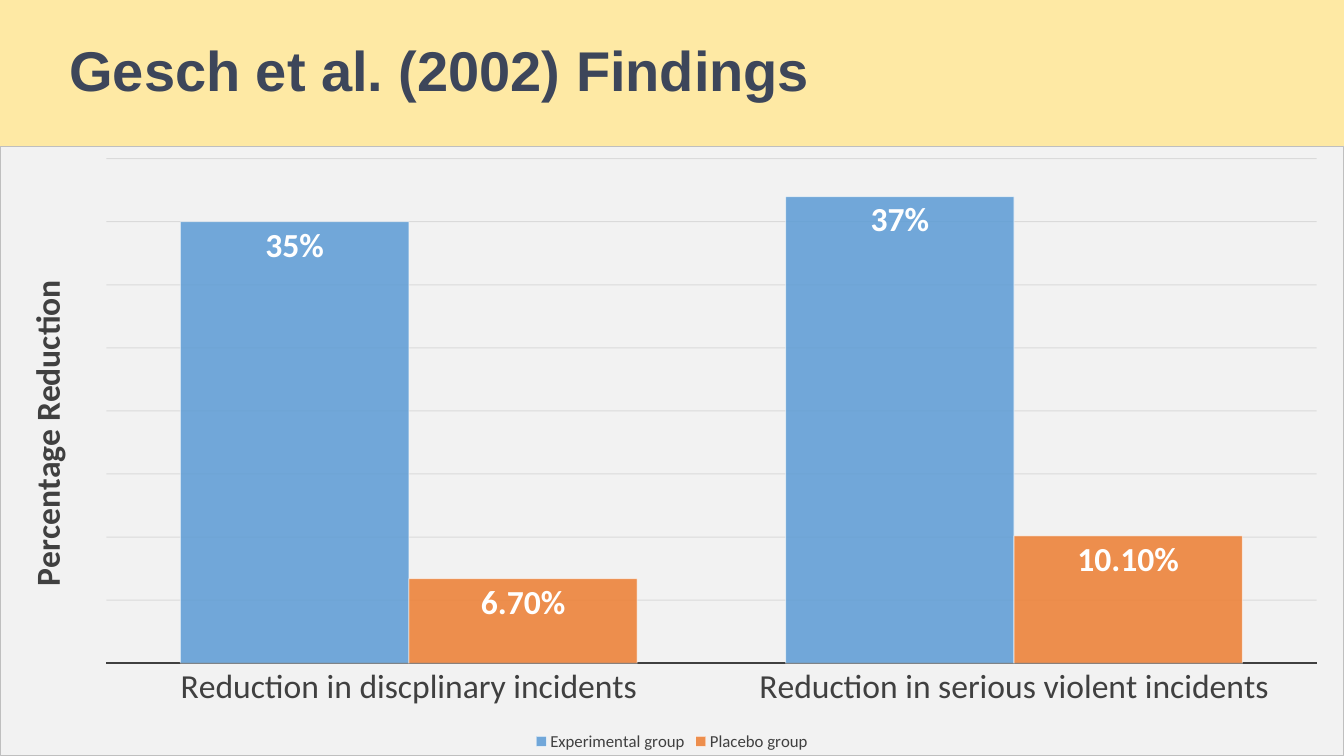
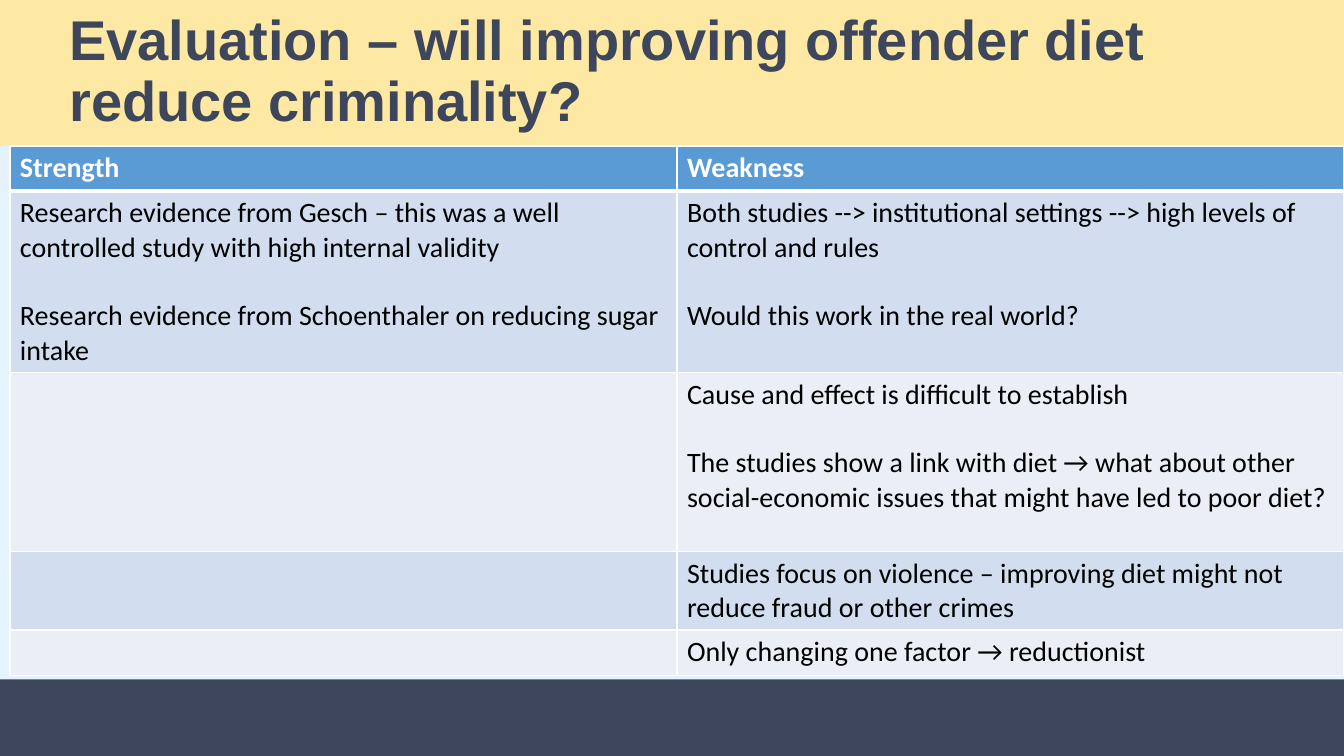
from dataclasses import dataclass

from lxml.etree import SubElement
from pptx import Presentation
from pptx.chart.data import CategoryChartData
from pptx.dml.color import RGBColor
from pptx.enum.chart import XL_CHART_TYPE as ChartType
from pptx.enum.chart import XL_LABEL_POSITION as LabelPosition
from pptx.enum.chart import XL_LEGEND_POSITION as LegendPosition
from pptx.enum.chart import XL_TICK_MARK as TickMark
from pptx.enum.shapes import MSO_SHAPE as ShapeType
from pptx.enum.text import MSO_ANCHOR as Anchor
from pptx.enum.text import PP_ALIGN as Align
from pptx.oxml import parse_xml
from pptx.oxml.ns import nsdecls, qn
from pptx.util import Cm, Pt

COLORS = {
    "page": "E5F3FF",
    "title_band": "FEE9A4",
    "navy": "3D465A",
    "blue": "5B9BD5",
    "orange": "ED7D31",
    "band_dark": "D2DEEF",
    "band_light": "EAEFF7",
    "chart_fill": "F2F2F2",
    "chart_border": "BFBFBF",
    "grid": "0D0D0D",
    "grey": "404040",
    "white": "FFFFFF",
    "black": "000000",
}
TITLE_FONT, BODY_FONT = "Arial", "Calibri"
SLIDE_WIDTH, SLIDE_HEIGHT = Cm(33.87), Cm(19.05)
TITLE_HEIGHT = Cm(3.68)
FOOTER_TOP = Cm(17.12)
TABLE_LEFT = Cm(0.25)
BLANK_LAYOUT = 6


@dataclass
class Group:
    name: str
    values: tuple[float, ...]
    color: str
    label_format: str


@dataclass
class Row:
    height: float
    strengths: tuple[str, ...]
    weaknesses: tuple[str, ...]


CATEGORIES = ("Reduction in discplinary incidents", "Reduction in serious violent incidents")
GROUPS = (
    Group("Experimental group", (0.35, 0.37), "blue", "0%"),
    Group("Placebo group", (0.067, 0.101), "orange", "0.00%"),
)
ROWS = (
    Row(1.14, ("Strength",), ("Weakness",)),
    Row(
        4.5,
        (
            "Research evidence from Gesch – this was a well controlled study with high internal validity",
            "Research evidence from Schoenthaler on reducing sugar intake",
        ),
        (
            "Both studies --> institutional settings --> high levels of control and rules",
            "Would this work in the real world?",
        ),
    ),
    Row(
        4.5,
        (),
        (
            "Cause and effect is difficult to establish",
            "The studies show a link with diet → what about other social-economic issues "
            "that might have led to poor diet?",
        ),
    ),
    Row(1.98, (), ("Studies focus on violence – improving diet might not reduce fraud or other crimes",)),
    Row(1.14, (), ("Only changing one factor → reductionist",)),
)


def rgb(name: str) -> RGBColor:
    return RGBColor.from_string(COLORS[name])


def style_font(font, size: float, color: str, bold: bool = False, name: str = BODY_FONT) -> None:
    font.name, font.size, font.bold = name, Pt(size), bold
    font.color.rgb = rgb(color)


def style_line(line, color: str, width: float) -> None:
    line.color.rgb = rgb(color)
    line.width = Pt(width)


def add_band(slide, top: int, height: int, color: str):
    shape = slide.shapes.add_shape(ShapeType.RECTANGLE, 0, top, SLIDE_WIDTH, height)
    shape.shadow.inherit = False
    shape.fill.solid()
    shape.fill.fore_color.rgb = rgb(color)
    shape.line.fill.background()
    return shape


def add_titled_slide(presentation, title: str):
    slide = presentation.slides.add_slide(presentation.slide_layouts[BLANK_LAYOUT])
    text_frame = add_band(slide, 0, TITLE_HEIGHT, "title_band").text_frame
    text_frame.text = title
    text_frame.word_wrap = True
    text_frame.vertical_anchor = Anchor.MIDDLE
    text_frame.margin_left = Cm(1.75)
    paragraph = text_frame.paragraphs[0]
    paragraph.alignment = Align.LEFT
    paragraph.line_spacing = 0.9
    style_font(paragraph.runs[0].font, 40, "navy", True, TITLE_FONT)
    return slide


def set_opacity(chart, xpath: str, percent: int) -> None:
    for color in chart.element.xpath(xpath + "/a:solidFill/a:srgbClr"):
        SubElement(color, qn("a:alpha")).set("val", str(percent * 1000))


def frame_chart(chart) -> None:
    frame = parse_xml(
        f'<c:spPr {nsdecls("c", "a")}>'
        f'<a:solidFill><a:srgbClr val="{COLORS["chart_fill"]}"/></a:solidFill>'
        f'<a:ln w="{Pt(0.75)}"><a:solidFill><a:srgbClr val="{COLORS["chart_border"]}"/>'
        "</a:solidFill></a:ln></c:spPr>"
    )
    chart.element.find(qn("c:chart")).addnext(frame)


def style_axes(chart) -> None:
    category_axis = chart.category_axis
    category_axis.major_tick_mark = category_axis.minor_tick_mark = TickMark.NONE
    style_line(category_axis.format.line, "grey", 1.5)
    style_font(category_axis.tick_labels.font, 24, "grey")

    value_axis = chart.value_axis
    value_axis.visible = False
    value_axis.minimum_scale, value_axis.maximum_scale = 0, 0.4
    value_axis.major_unit = 0.05
    value_axis.has_major_gridlines = True
    style_line(value_axis.major_gridlines.format.line, "grid", 0.75)
    text_frame = value_axis.axis_title.text_frame
    text_frame.text = "Percentage Reduction"
    style_font(text_frame.paragraphs[0].runs[0].font, 24, "grey", True)


def add_findings_chart(slide) -> None:
    data = CategoryChartData()
    data.categories = CATEGORIES
    for group in GROUPS:
        data.add_series(group.name, group.values, "0.0%")
    chart = slide.shapes.add_chart(
        ChartType.COLUMN_CLUSTERED, 0, TITLE_HEIGHT, SLIDE_WIDTH, SLIDE_HEIGHT - TITLE_HEIGHT, data
    ).chart
    chart.has_title = False
    style_font(chart.font, 10, "white")
    style_axes(chart)
    chart.has_legend = True
    chart.legend.position = LegendPosition.BOTTOM
    chart.legend.include_in_layout = False
    style_font(chart.legend.font, 12, "grey")

    plot = chart.plots[0]
    plot.gap_width, plot.overlap = 65, 0
    plot.vary_by_categories = False
    for series, group in zip(plot.series, GROUPS):
        series.format.fill.solid()
        series.format.fill.fore_color.rgb = rgb(group.color)
        style_line(series.format.line, "white", 0.75)
        labels = series.data_labels
        labels.show_value = True
        labels.position = LabelPosition.INSIDE_END
        labels.number_format = group.label_format
        labels.number_format_is_linked = False
        style_font(labels.font, 24, "white", True)

    set_opacity(chart, "//c:ser/c:spPr", 85)
    set_opacity(chart, "//c:ser/c:spPr/a:ln", 50)
    set_opacity(chart, "//c:majorGridlines/c:spPr/a:ln", 10)
    frame_chart(chart)


def set_borders(cell, top: float, bottom: float) -> None:
    properties = cell._tc.get_or_add_tcPr()
    for tag, width in (("a:lnL", 1), ("a:lnR", 1), ("a:lnT", top), ("a:lnB", bottom)):
        line = SubElement(properties, qn(tag), w=str(Pt(width)))
        fill = SubElement(line, qn("a:solidFill"))
        SubElement(fill, qn("a:srgbClr"), val=COLORS["white"])


def fill_cell(cell, texts: tuple[str, ...], row_index: int) -> None:
    is_header = row_index == 0
    set_borders(cell, 3 if row_index == 1 else 1, 3 if is_header else 1)
    cell.fill.solid()
    band = "band_dark" if row_index % 2 else "band_light"
    cell.fill.fore_color.rgb = rgb("blue" if is_header else band)
    cell.text_frame.text = "\n".join(texts)
    for index, paragraph in enumerate(cell.text_frame.paragraphs):
        if index:
            paragraph.space_before = Pt(24.4)
        style_font(paragraph.font, 20, "white" if is_header else "black", is_header)
        for run in paragraph.runs:
            style_font(run.font, 20, "white" if is_header else "black", is_header)


def add_evaluation_table(slide) -> None:
    height = Cm(sum(row.height for row in ROWS))
    table = slide.shapes.add_table(
        len(ROWS), 2, TABLE_LEFT, TITLE_HEIGHT, SLIDE_WIDTH - TABLE_LEFT, height
    ).table
    for row_index, row in enumerate(ROWS):
        table.rows[row_index].height = Cm(row.height)
        for column_index, texts in enumerate((row.strengths, row.weaknesses)):
            fill_cell(table.cell(row_index, column_index), texts, row_index)


def main() -> None:
    presentation = Presentation()
    presentation.slide_width, presentation.slide_height = SLIDE_WIDTH, SLIDE_HEIGHT
    background = presentation.slide_master.background.fill
    background.solid()
    background.fore_color.rgb = rgb("page")

    add_findings_chart(add_titled_slide(presentation, "Gesch et al. (2002) Findings"))

    evaluation = add_titled_slide(
        presentation, "Evaluation – will improving offender diet reduce criminality?"
    )
    add_band(evaluation, FOOTER_TOP, SLIDE_HEIGHT - FOOTER_TOP, "navy")
    add_evaluation_table(evaluation)

    presentation.save("out.pptx")


if __name__ == "__main__":
    main()
